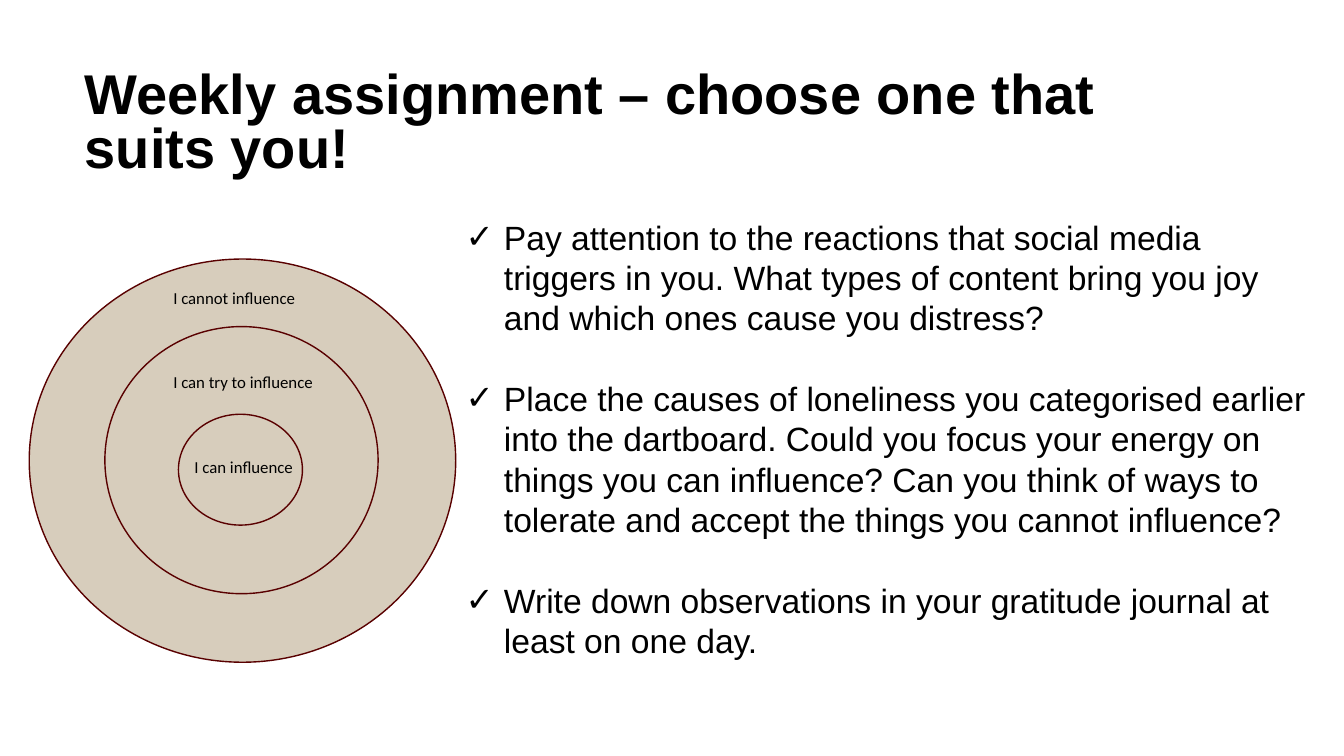
from lxml.etree import SubElement
from pptx import Presentation
from pptx.dml.color import RGBColor
from pptx.enum.shapes import MSO_SHAPE
from pptx.enum.text import MSO_ANCHOR, MSO_AUTO_SIZE, PP_ALIGN
from pptx.oxml.ns import qn
from pptx.util import Inches, Pt

COLORS = {"text": "000000", "ring": "D7CDBC", "outline": "590000"}
LINE_HEIGHT = 1.2  # line pitch as a share of the font size


def set_font(paragraph, name, size, bold=False):
    paragraph.font.name = name
    paragraph.font.size = Pt(size)
    paragraph.font.bold = bold
    paragraph.font.color.rgb = RGBColor.from_string(COLORS["text"])


presentation = Presentation()
presentation.slide_width = Inches(13.33)
presentation.slide_height = Inches(7.5)
slide = presentation.slides.add_slide(presentation.slide_layouts[5])

# Title
title = slide.shapes.title
title.left, title.top = Inches(0.74), Inches(0.61)
title.width, title.height = Inches(11.5), Inches(1.28)
title.text_frame.text = "Weekly assignment – choose one that suits you!"
title.text_frame.auto_size = MSO_AUTO_SIZE.NONE
title.text_frame.vertical_anchor = MSO_ANCHOR.MIDDLE
heading = title.text_frame.paragraphs[0]
heading.alignment = PP_ALIGN.LEFT
heading.line_spacing = Pt(40 * LINE_HEIGHT * 0.8)
set_font(heading, "Arial", 40, bold=True)

# Checklist of assignments
assignments = [
    "Pay attention to the reactions that social media triggers in you. "
    "What types of content bring you joy and which ones cause you distress?",
    "Place the causes of loneliness you categorised earlier into the dartboard. "
    "Could you focus your energy on things you can influence? "
    "Can you think of ways to tolerate and accept the things you cannot influence?",
    "Write down observations in your gratitude journal at least on one day.",
]
checklist = slide.shapes.add_textbox(Inches(4.4), Inches(2.3), Inches(8.79), Inches(4.1))
checklist.text_frame.word_wrap = True
checklist.text_frame.vertical_anchor = MSO_ANCHOR.MIDDLE
for index, assignment in enumerate(assignments):
    paragraph = checklist.text_frame.paragraphs[0] if index == 0 else checklist.text_frame.add_paragraph()
    paragraph.text = assignment
    paragraph.line_spacing = Pt(24 * LINE_HEIGHT)
    if index > 0:
        paragraph.space_before = Pt(24 * LINE_HEIGHT)
    properties = paragraph._p.get_or_add_pPr()
    properties.set("marL", str(Inches(0.5)))
    properties.set("indent", str(Inches(-0.38)))
    SubElement(properties, qn("a:buFont"), typeface="Arial")
    SubElement(properties, qn("a:buChar"), char="✓")
    set_font(paragraph, "Arial", 24)

# Dartboard rings, from the outside in
rings = [(0.29, 2.57, 4.23, 4), (1.04, 3.24, 2.71, 2.65), (1.77, 4.11, 1.23, 1.1)]
for box in rings:
    ring = slide.shapes.add_shape(MSO_SHAPE.FLOWCHART_CONNECTOR, *map(Inches, box))
    ring.shadow.inherit = False
    ring.fill.solid()
    ring.fill.fore_color.rgb = RGBColor.from_string(COLORS["ring"])
    ring.line.color.rgb = RGBColor.from_string(COLORS["outline"])
    ring.line.width = Pt(1)

# Ring labels
labels = [
    ("I cannot influence", 1.62, 2.81, 1.81),
    ("I can try to influence", 1.62, 3.64, 1.81),
    ("I can influence", 1.83, 4.48, 2.57),
]
for text, left, top, width in labels:
    label = slide.shapes.add_textbox(Inches(left), Inches(top), Inches(width), Inches(0.3))
    label.text_frame.word_wrap = True
    label.text_frame.text = text
    set_font(label.text_frame.paragraphs[0], "Calibri", 12)

presentation.save("out.pptx")
